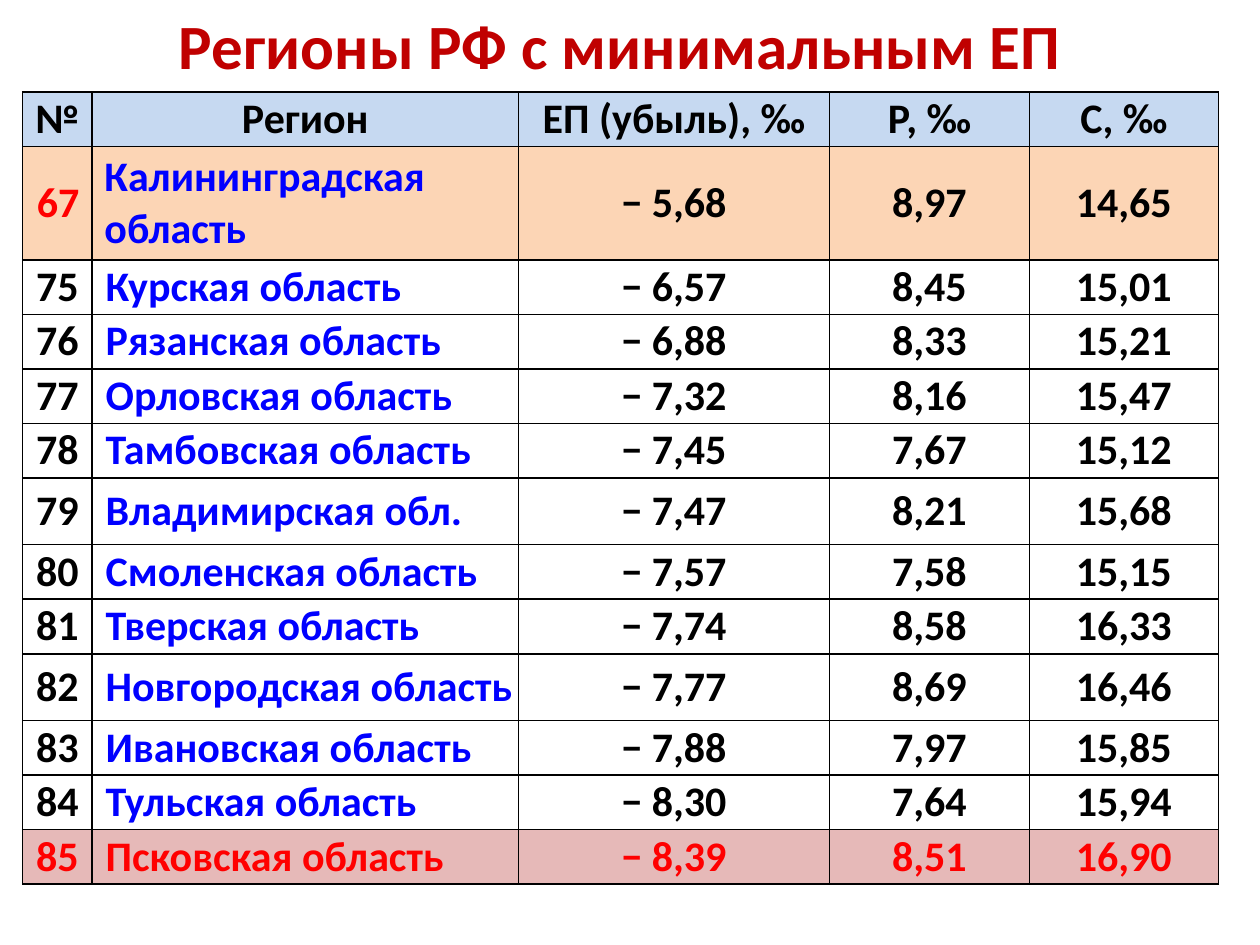
from dataclasses import dataclass

from lxml import etree
from pptx import Presentation
from pptx.dml.color import RGBColor
from pptx.enum.text import MSO_ANCHOR, PP_ALIGN
from pptx.oxml.ns import qn
from pptx.util import Inches, Pt

LEFT, MID, RIGHT = PP_ALIGN.LEFT, PP_ALIGN.CENTER, PP_ALIGN.RIGHT
CENTRE = MSO_ANCHOR.MIDDLE
UNIT = Inches(0.1)
WIDE, HIGH = 100, 75


@dataclass(frozen=True)
class Theme:
    font: str = "Calibri"
    title: int = 36
    body: int = 24
    rule: int = 1
    ink: str = "000000"
    head: str = "C00000"
    blue: str = "0000FF"
    red: str = "FF0000"
    white: str = "FFFFFF"
    sky: str = "C6D9F1"
    peach: str = "FCD5B5"
    rose: str = "E6B9B8"


@dataclass(frozen=True)
class Box:
    x: float
    y: float
    w: float
    h: float

    def place(self):
        return [int(side * UNIT) for side in (self.x, self.y, self.w, self.h)]


THEME = Theme()
TITLE = "Регионы РФ с минимальным ЕП"
HEADS = ("№", "Регион", "ЕП (убыль), ‰", "Р, ‰", "С, ‰")
DATA = (
    ("67", "Калининградская область", "− 5,68", "8,97", "14,65"),
    ("75", "Курская область", "− 6,57", "8,45", "15,01"),
    ("76", "Рязанская область", "− 6,88", "8,33", "15,21"),
    ("77", "Орловская область", "− 7,32", "8,16", "15,47"),
    ("78", "Тамбовская область", "− 7,45", "7,67", "15,12"),
    ("79", "Владимирская обл.", "− 7,47", "8,21", "15,68"),
    ("80", "Смоленская область", "− 7,57", "7,58", "15,15"),
    ("81", "Тверская область", "− 7,74", "8,58", "16,33"),
    ("82", "Новгородская область", "− 7,77", "8,69", "16,46"),
    ("83", "Ивановская область", "− 7,88", "7,97", "15,85"),
    ("84", "Тульская область", "− 8,30", "7,64", "15,94"),
    ("85", "Псковская область", "− 8,39", "8,51", "16,90"),
)
COLS = (5.5, 33.9, 24.7, 15.9, 15)
ROW = 4.33
TALL = {"67": 9, "79": 5.3, "82": 5.3}
FILLS = {"№": THEME.sky, "67": THEME.peach, "85": THEME.rose}


def style(para, size, tint, align):
    para.alignment = align
    para.font.name = THEME.font
    para.font.size = Pt(size)
    para.font.bold = True
    para.font.color.rgb = RGBColor.from_string(tint)


def rule(cell):
    props = cell._tc.get_or_add_tcPr()
    for side in ("lnL", "lnR", "lnT", "lnB"):
        line = etree.SubElement(props, qn(f"a:{side}"), w=str(Pt(THEME.rule)))
        fill = etree.SubElement(line, qn("a:solidFill"))
        etree.SubElement(fill, qn("a:srgbClr"), val=THEME.ink)


def tint(key, col):
    if key == "85" or (key == "67" and col == 0):
        return THEME.red
    return THEME.blue if key != "№" and col == 1 else THEME.ink


def pad(cell, key, name):
    side, lead, edge = (0.1, 0.1, 0.04) if key == "67" else (0.03, 0.11, 0.01)
    cell.margin_left = Inches(lead if name else side)
    cell.margin_right = Inches(side)
    cell.margin_top = cell.margin_bottom = Inches(edge)


def title(slide, box):
    frame = slide.shapes.add_textbox(*box.place()).text_frame
    frame.word_wrap = True
    para = frame.paragraphs[0]
    para.text = TITLE
    style(para, THEME.title, THEME.head, MID)


def table(slide, box):
    rows = (HEADS, *DATA)
    grid = slide.shapes.add_table(len(rows), len(COLS), *box.place()).table
    grid.first_row = grid.horz_banding = False
    for col, width in zip(grid.columns, COLS):
        col.width = int(box.w * width / sum(COLS) * UNIT)
    for row, texts in zip(grid.rows, rows):
        key = texts[0]
        row.height = int(TALL.get(key, ROW) * UNIT)
        for col, (cell, text) in enumerate(zip(row.cells, texts)):
            name = col == 1 and key != "№"
            align = LEFT if name else MID
            if key == "67" and col == 0:
                align = RIGHT
            cell.text = text
            cell.vertical_anchor = CENTRE
            pad(cell, key, name)
            rule(cell)
            cell.fill.solid()
            shade = FILLS.get(key, THEME.white)
            cell.fill.fore_color.rgb = RGBColor.from_string(shade)
            para = cell.text_frame.paragraphs[0]
            style(para, THEME.body, tint(key, col), align)


def main():
    deck = Presentation()
    deck.slide_width, deck.slide_height = WIDE * UNIT, HIGH * UNIT
    slide = deck.slides.add_slide(deck.slide_layouts[6])
    table(slide, Box(1.8, 7.3, 94.9, 63))
    title(slide, Box(4.3, 0, 89.8, 7.1))
    deck.save("out.pptx")


if __name__ == "__main__":
    main()
